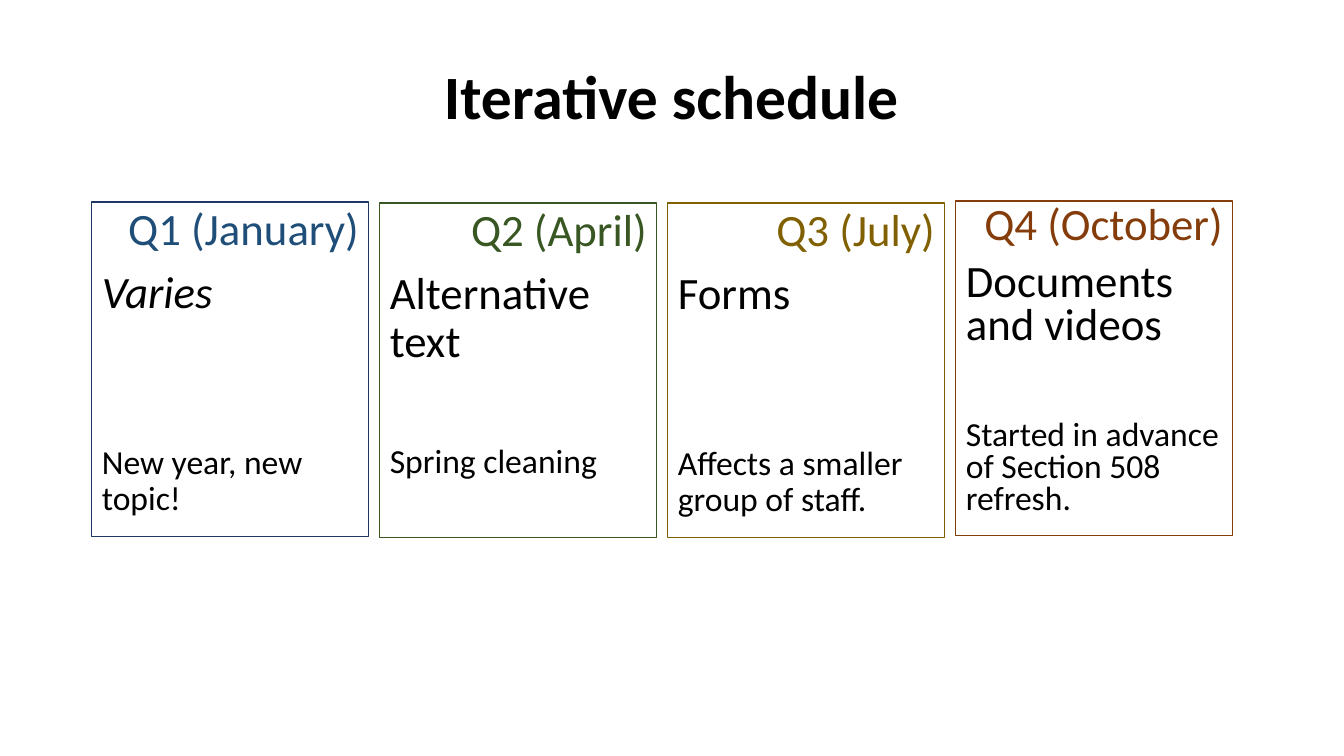
"""Build the slide showing the iterative quarterly schedule."""
from pptx import Presentation
from pptx import util as u
from pptx.dml.color import RGBColor
from pptx.enum import shapes, text

BLACK = RGBColor(0x00, 0x00, 0x00)
NAVY = RGBColor(0x20, 0x38, 0x64)
BLUE = RGBColor(0x1F, 0x4E, 0x79)
GREEN = RGBColor(0x38, 0x57, 0x23)
GOLD = RGBColor(0x80, 0x60, 0x00)
RUST = RGBColor(0x84, 0x3C, 0x0B)

TITLE = "Iterative schedule"
QUARTERS = [
    {"name": "Q1 (January)", "topic": "Varies", "reason": "New year, new topic!",
     "line": NAVY, "color": BLUE, "top": 202, "italic": True, "spacing": 0.9, "gap": 91},
    {"name": "Q2 (April)", "topic": "Alternative text", "reason": "Spring cleaning",
     "line": GREEN, "color": GREEN, "top": 203, "italic": False, "spacing": 0.9, "gap": 55},
    {"name": "Q3 (July)", "topic": "Forms", "reason": "Affects a smaller group of staff.",
     "line": GOLD, "color": GOLD, "top": 203, "italic": False, "spacing": 0.9, "gap": 91},
    {"name": "Q4 (October)", "topic": "Documents and videos",
     "reason": "Started in advance of Section 508 refresh.",
     "line": RUST, "color": RUST, "top": 201, "italic": False, "spacing": 0.8, "gap": 51},
]

LEFT, PITCH, CARD_WIDTH, CARD_HEIGHT = 92, 288, 277, 335
TITLE_AREA = (92, 40, 1159, 120)
PX = u.Inches(1) / 100.8


def px(length):
    return u.Emu(round(length * PX))


def apply(target, values):
    for name, value in values.items():
        setattr(target, name, value)


def write(para, words, layout, font):
    apply(para, layout)
    span = para.add_run()
    span.text = words
    color = font.pop("color")
    apply(span.font, {"name": "Calibri", **font})
    span.font.color.rgb = color


def add_title(page):
    box = page.shapes.add_textbox(*map(px, TITLE_AREA))
    apply(box.text_frame, {"word_wrap": True, "vertical_anchor": text.MSO_ANCHOR.MIDDLE})
    write(box.text_frame.paragraphs[0], TITLE,
          {"alignment": text.PP_ALIGN.CENTER, "line_spacing": 0.9},
          {"size": u.Pt(44), "bold": True, "color": BLACK})


def add_card(page, index, quarter):
    box = page.shapes.add_shape(
        shapes.MSO_SHAPE.RECTANGLE, px(LEFT + index * PITCH), px(quarter["top"]),
        px(CARD_WIDTH), px(CARD_HEIGHT))
    box.shadow.inherit = False
    box.fill.background()
    box.line.color.rgb = quarter["line"]
    box.line.width = u.Pt(0.75)
    frame = box.text_frame
    apply(frame, {"word_wrap": True, "vertical_anchor": text.MSO_ANCHOR.TOP})
    right, left = text.PP_ALIGN.RIGHT, text.PP_ALIGN.LEFT
    rows = [
        (quarter["name"], right, 0, 32, quarter["color"], False),
        (quarter["topic"], left, 10, 32, BLACK, quarter["italic"]),
        (quarter["reason"], left, quarter["gap"], 24, BLACK, False),
    ]
    for row, (words, alignment, before, size, color, italic) in enumerate(rows):
        para = frame.add_paragraph() if row else frame.paragraphs[0]
        write(para, words,
              {"alignment": alignment, "line_spacing": quarter["spacing"],
               "space_before": u.Pt(before)},
              {"size": u.Pt(size), "italic": italic, "color": color})


def main():
    deck = Presentation()
    apply(deck, {"slide_width": px(1344), "slide_height": px(756)})
    page = deck.slides.add_slide(deck.slide_layouts[6])
    add_title(page)
    for index, quarter in enumerate(QUARTERS):
        add_card(page, index, quarter)
    deck.save("out.pptx")


if __name__ == "__main__":
    main()
